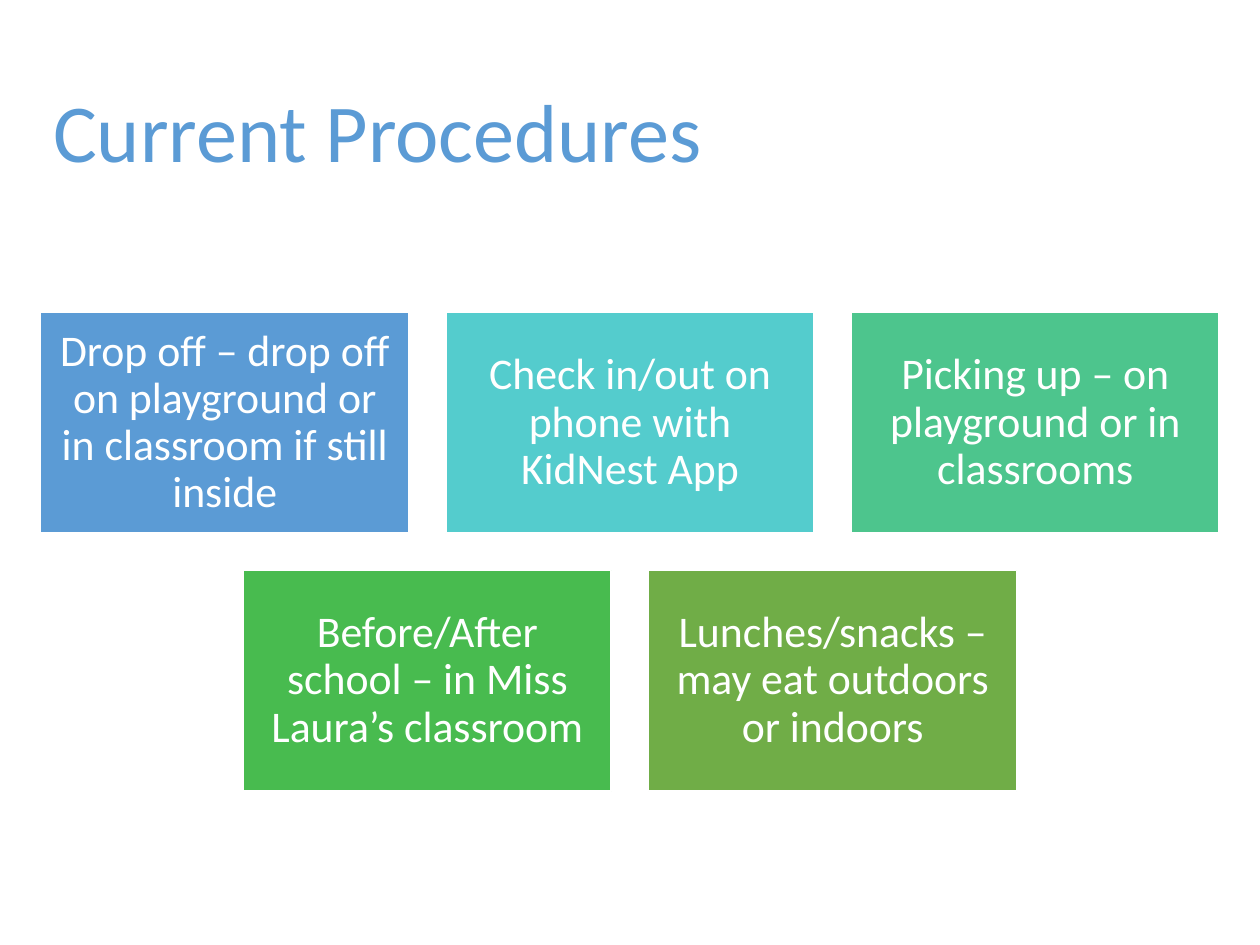
import pptx
import pptx.dml.color
import pptx.enum.shapes
import pptx.enum.text
import pptx.util
from pptx.util import Cm

TITLE = "Current Procedures"
TITLE_COLOUR = "5B9BD5"
WHITE = "FFFFFF"
FONT = "Calibri"

# Rows of cards: (text, fill)
CARD_ROWS = [
    [
        ("Drop off – drop off on playground or in classroom if still inside", "5B9BD5"),
        ("Check in/out on phone with KidNest App", "54CCCD"),
        ("Picking up – on playground or in classrooms", "4DC58D"),
    ],
    [
        ("Before/After school – in Miss Laura’s classroom", "48BB4F"),
        ("Lunches/snacks – may eat outdoors or indoors", "70AD47"),
    ],
]

# Lengths in centimetres
PAGE_WIDTH, PAGE_HEIGHT = 25.4, 19.05
CARD_WIDTH, CARD_HEIGHT, GAP = 7.42, 4.45, 0.75
CARDS_TOP = 6.3


def colour(hex_text):
    return pptx.dml.color.RGBColor.from_string(hex_text)


def write(box, text, size, hex_text, align):
    frame = box.text_frame
    frame.text = text
    frame.word_wrap = True
    frame.vertical_anchor = pptx.enum.text.MSO_ANCHOR.MIDDLE
    para = frame.paragraphs[0]
    para.alignment = align
    para.line_spacing = 0.9
    font = para.runs[0].font
    font.name = FONT
    font.size = pptx.util.Pt(size)
    font.color.rgb = colour(hex_text)


def add_card(page, left, top, text, fill):
    card = page.shapes.add_shape(
        pptx.enum.shapes.MSO_SHAPE.RECTANGLE,
        Cm(left), Cm(top), Cm(CARD_WIDTH), Cm(CARD_HEIGHT))
    card.shadow.inherit = False
    card.fill.solid()
    card.fill.fore_color.rgb = colour(fill)
    card.line.color.rgb = colour(WHITE)
    card.line.width = pptx.util.Pt(1)
    write(card, text, 25, WHITE, pptx.enum.text.PP_ALIGN.CENTER)
    frame = card.text_frame
    frame.margin_left = frame.margin_right = Cm(0.26)
    frame.margin_top = frame.margin_bottom = Cm(0.26)


deck = pptx.Presentation()
deck.slide_width, deck.slide_height = Cm(PAGE_WIDTH), Cm(PAGE_HEIGHT)
page = deck.slides.add_slide(deck.slide_layouts[6])

# Title
title = page.shapes.add_textbox(Cm(0.82), Cm(0.9), Cm(23.76), Cm(3.68))
write(title, TITLE, 47, TITLE_COLOUR, pptx.enum.text.PP_ALIGN.LEFT)

# Cards, each row centred on the page
for row, cards in enumerate(CARD_ROWS):
    row_width = len(cards) * (CARD_WIDTH + GAP) - GAP
    row_left = (PAGE_WIDTH - row_width) / 2
    top = CARDS_TOP + row * (CARD_HEIGHT + GAP)
    for column, (text, fill) in enumerate(cards):
        add_card(page, row_left + column * (CARD_WIDTH + GAP), top, text, fill)

deck.save("out.pptx")
